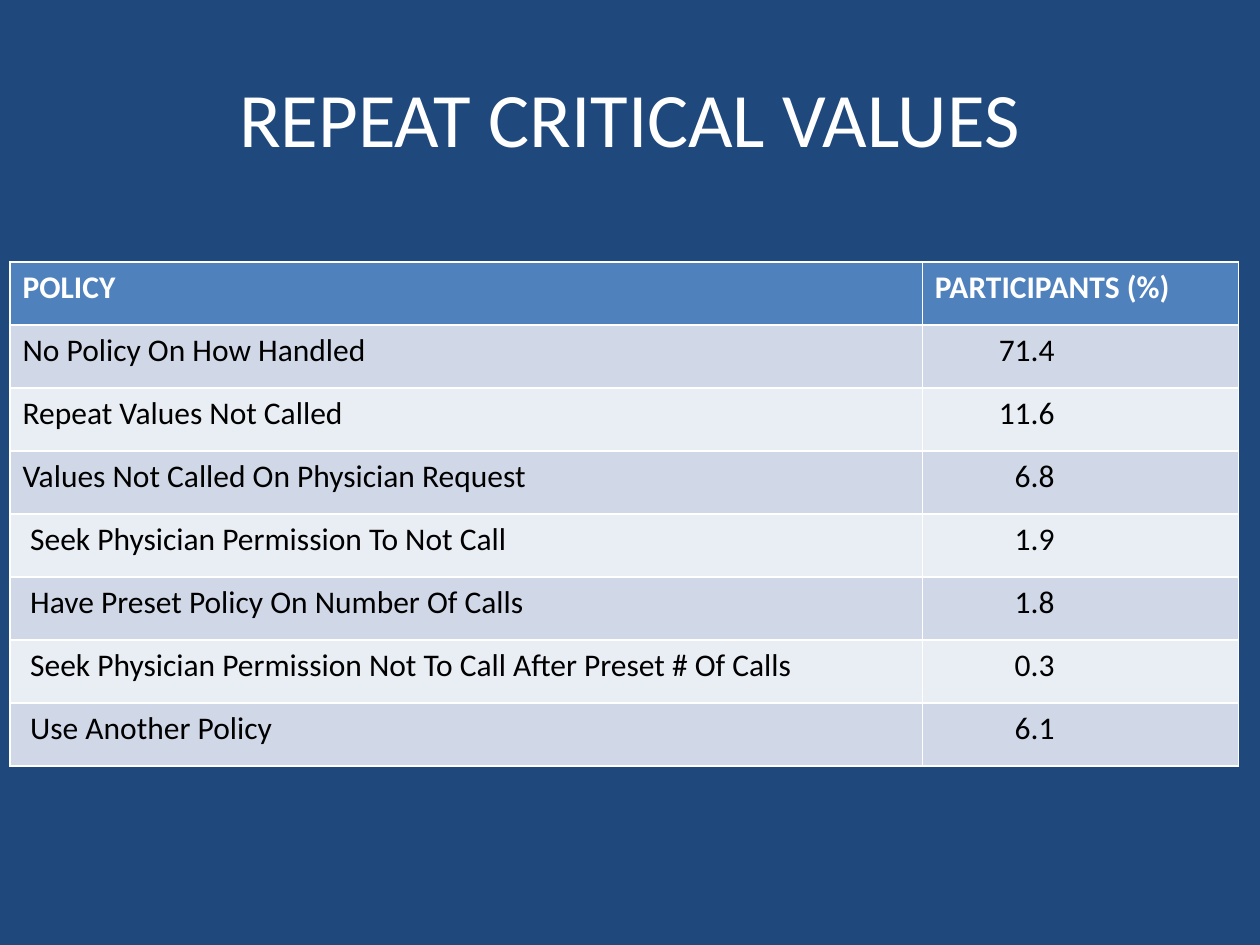
from pptx import Presentation
from pptx.dml.color import RGBColor
from pptx.enum.text import MSO_ANCHOR, PP_ALIGN
from pptx.util import Inches, Pt

COLORS = {
    "background": "1F497D", "header": "4F81BD", "odd": "D0D8E8",
    "even": "E9EDF4", "light": "FFFFFF", "dark": "000000",
}
# label, share of participants, extra left indent of the label
POLICIES = [
    ("No Policy On How Handled", 71.4, 0),
    ("Repeat Values Not Called", 11.6, 0),
    ("Values Not Called On Physician Request", 6.8, 0),
    ("Seek Physician Permission To Not Call", 1.9, 0.06),
    ("Have Preset Policy On Number Of Calls", 1.8, 0.06),
    ("Seek Physician Permission Not To Call After Preset # Of Calls", 0.3, 0.06),
    ("Use Another Policy", 6.1, 0.06),
]
CELL_MARGIN = 0.1
VALUE_MARGIN = 1.46


def rgb(name):
    return RGBColor.from_string(COLORS[name])


def write(tf, text, size=18, color="dark", bold=False, align=PP_ALIGN.LEFT):
    p = tf.paragraphs[0]
    p.alignment = align
    r = p.add_run()
    r.text = text
    r.font.name = "Calibri"
    r.font.size = Pt(size)
    r.font.bold = bold
    r.font.color.rgb = rgb(color)


prs = Presentation()
prs.slide_width, prs.slide_height = Inches(10), Inches(7.5)
s = prs.slides.add_slide(prs.slide_layouts[6])
s.background.fill.solid()
s.background.fill.fore_color.rgb = rgb("background")

title = s.shapes.add_textbox(Inches(0.5), Inches(0.3), Inches(9), Inches(1.25))
title.text_frame.word_wrap = True
title.text_frame.vertical_anchor = MSO_ANCHOR.MIDDLE
write(title.text_frame, "REPEAT CRITICAL VALUES", size=44, color="light",
      align=PP_ALIGN.CENTER)

table = s.shapes.add_table(len(POLICIES) + 1, 2, Inches(0.08), Inches(2.08),
                           Inches(9.75), Inches(4)).table
table.columns[0].width = Inches(7.24)
table.columns[1].width = Inches(2.51)

for i, row in enumerate(table.rows):
    for cell in row.cells:
        cell.fill.solid()
        cell.fill.fore_color.rgb = rgb("header" if i == 0 else "odd" if i % 2 else "even")

for col, heading in enumerate(("POLICY", "PARTICIPANTS (%)")):
    write(table.cell(0, col).text_frame, heading, color="light", bold=True)

for i, (label, share, indent) in enumerate(POLICIES, start=1):
    policy, value = table.cell(i, 0), table.cell(i, 1)
    policy.margin_left = Inches(CELL_MARGIN + indent)
    write(policy.text_frame, label)
    value.margin_right = Inches(VALUE_MARGIN)
    write(value.text_frame, str(share), align=PP_ALIGN.RIGHT)

prs.save("out.pptx")
